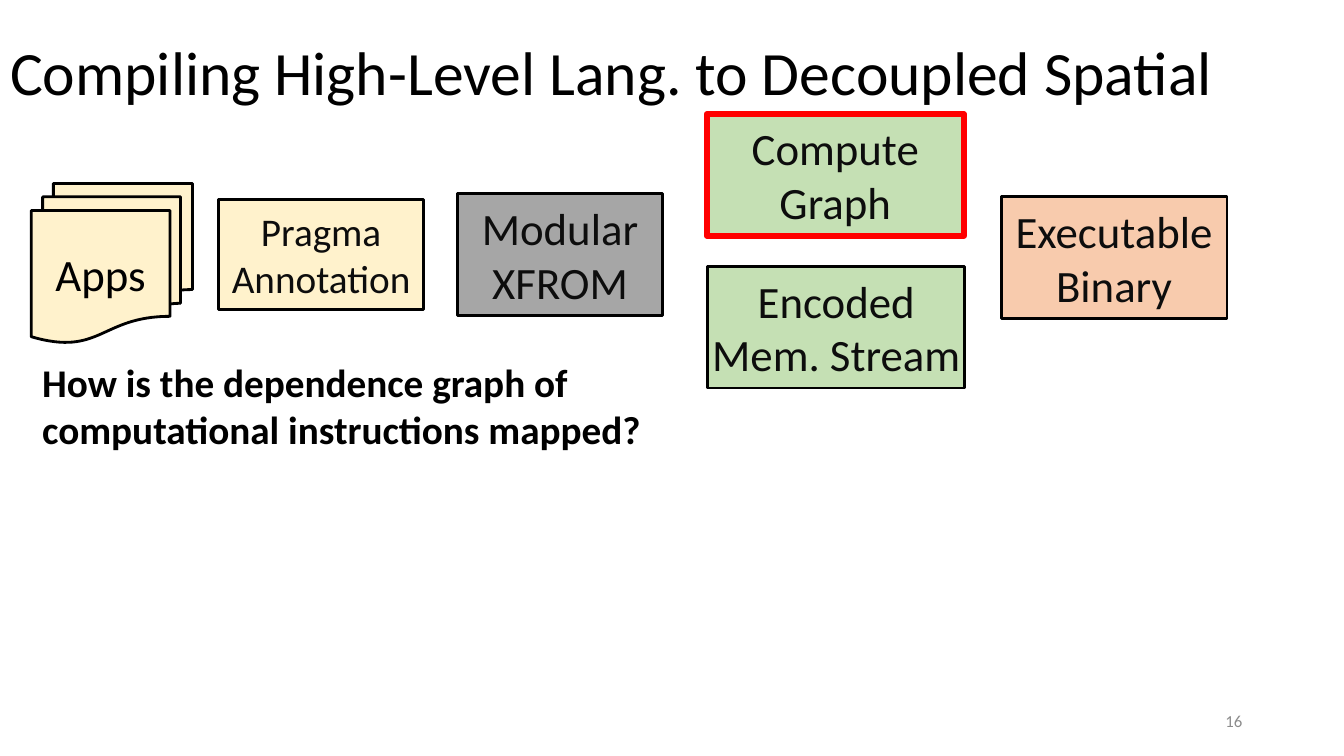
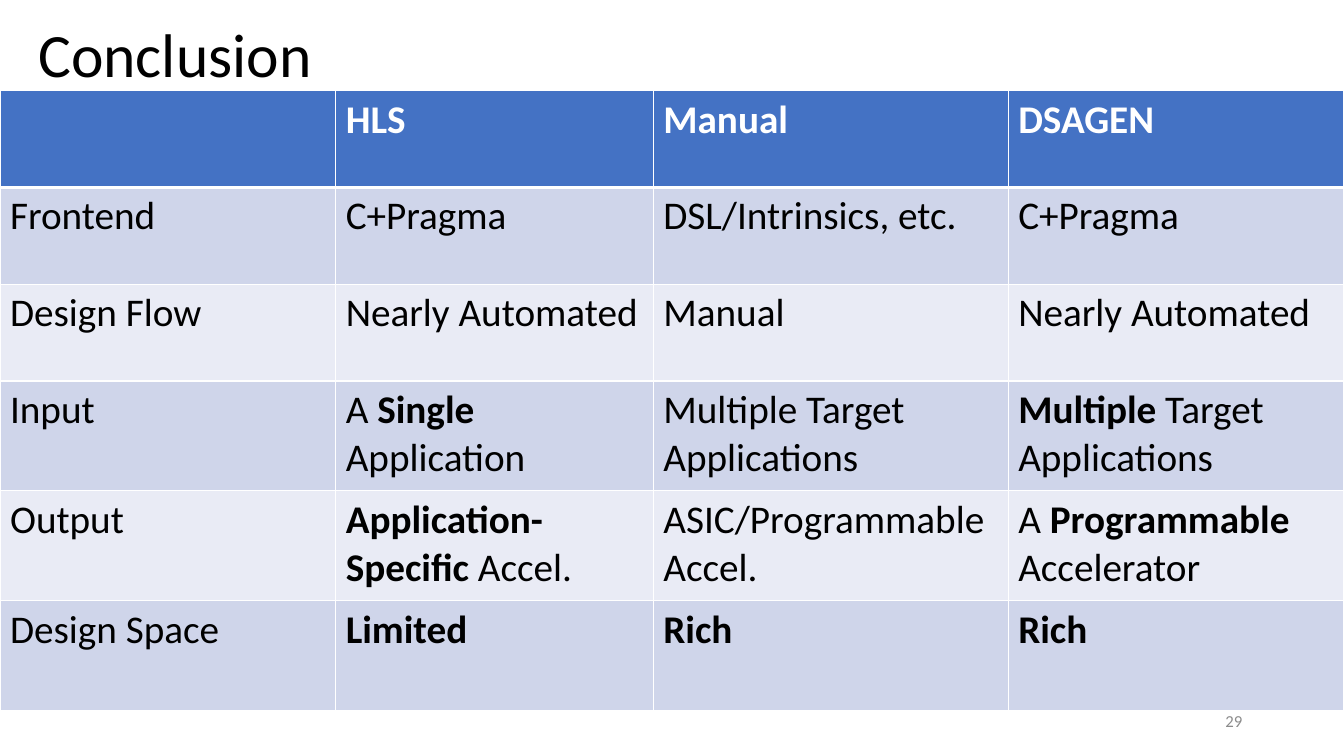
from dataclasses import dataclass

from lxml.etree import SubElement
from pptx import Presentation
from pptx.dml.color import RGBColor
from pptx.enum.shapes import MSO_SHAPE
from pptx.enum.text import MSO_ANCHOR, MSO_AUTO_SIZE, PP_ALIGN
from pptx.oxml.ns import qn
from pptx.presentation import Presentation as Deck
from pptx.slide import Slide
from pptx.table import _Cell as Cell
from pptx.text.text import TextFrame
from pptx.util import Inches, Pt

FONT = "Calibri"
BLACK, WHITE, RED = "000000", "FFFFFF", "FF0000"
INK, PAGE_GREY = "0D0D0D", "8C8C8C"
CREAM, GREY, GREEN, PEACH = "FFF2CC", "A6A6A6", "C5E0B4", "F8CBAD"
HEADER_BLUE, BANDS = "4472C4", ("CFD5EA", "E9EBF5")


@dataclass(frozen=True)
class Area:
    left: float
    top: float
    width: float
    height: float

    def lengths(self) -> tuple[Inches, ...]:
        return tuple(Inches(n) for n in (self.left, self.top, self.width, self.height))


@dataclass(frozen=True)
class Stage:
    text: str
    area: Area
    fill: str
    outline: str = BLACK
    outline_width: float = 2
    size: float = 32
    ink: str = INK
    shape: MSO_SHAPE = MSO_SHAPE.RECTANGLE
    wrap: bool = True


STAGES = (
    Stage("Executable Binary", Area(9.93, 1.95, 2.24, 1.21), PEACH),
    Stage("Apps", Area(0.31, 1.82, 1.6, 1.58), CREAM, ink=BLACK,
          shape=MSO_SHAPE.FLOWCHART_MULTIDOCUMENT),
    Stage("Compute Graph", Area(7.01, 1.13, 2.55, 1.21), GREEN,
          outline=RED, outline_width=4),
    Stage("Encoded\nMem. Stream", Area(7.02, 2.64, 2.55, 1.21), GREEN, wrap=False),
    Stage("Pragma Annotation", Area(2.17, 1.98, 2.03, 1.09), CREAM, size=28),
    Stage("Modular XFROM", Area(4.54, 1.92, 2.03, 1.21), GREY),
)

COMPARISON = (
    ("", "**HLS**", "**Manual**", "**DSAGEN**"),
    ("Frontend", "C+Pragma", "DSL/Intrinsics, etc.", "C+Pragma"),
    ("Design Flow", "Nearly Automated", "Manual", "Nearly Automated"),
    ("Input", "A **Single** Application", "Multiple Target Applications",
     "**Multiple** Target Applications"),
    ("Output", "**Application-Specific** Accel.", "ASIC/Programmable Accel.",
     "A **Programmable** Accelerator"),
    ("Design Space", "**Limited**", "**Rich**", "**Rich**"),
)
COLUMN_WIDTHS = (3.33, 3.15, 3.52, 3.33)
ROW_HEIGHTS = (0.96,) * 3 + (1.09,) * 3


def rgb(color: str) -> RGBColor:
    return RGBColor.from_string(color)


def write(frame: TextFrame, text: str, *, size: float, color: str = BLACK,
          align: PP_ALIGN = PP_ALIGN.LEFT, anchor: MSO_ANCHOR = MSO_ANCHOR.TOP,
          wrap: bool = True, line_spacing: float | None = None) -> None:
    """Fill a frame; newlines part paragraphs and ** marks bold spans."""
    frame.word_wrap = wrap
    frame.vertical_anchor = anchor
    for index, line in enumerate(text.split("\n")):
        para = frame.add_paragraph() if index else frame.paragraphs[0]
        para.alignment = align
        para.line_spacing = line_spacing
        for part, words in enumerate(line.split("**")):
            if words:
                span = para.add_run()
                span.text = words
                span.font.name = FONT
                span.font.size = Pt(size)
                span.font.bold = part % 2 == 1
                span.font.color.rgb = rgb(color)


def add_text(page: Slide, area: Area, text: str, **text_format) -> None:
    write(page.shapes.add_textbox(*area.lengths()).text_frame, text, **text_format)


def add_page(deck: Deck, title: str, area: Area, number: int) -> Slide:
    page = deck.slides.add_slide(deck.slide_layouts[5])
    heading = page.shapes.title
    heading.left, heading.top, heading.width, heading.height = area.lengths()
    heading.text_frame.auto_size = MSO_AUTO_SIZE.NONE
    write(heading.text_frame, title, size=44, anchor=MSO_ANCHOR.MIDDLE, line_spacing=0.9)
    add_text(page, Area(9.42, 6.95, 3, 0.4), str(number), size=12, color=PAGE_GREY,
             align=PP_ALIGN.RIGHT, anchor=MSO_ANCHOR.MIDDLE)
    return page


def add_stage(page: Slide, stage: Stage) -> None:
    box = page.shapes.add_shape(stage.shape, *stage.area.lengths())
    box.shadow.inherit = False
    box.fill.solid()
    box.fill.fore_color.rgb = rgb(stage.fill)
    box.line.color.rgb = rgb(stage.outline)
    box.line.width = Pt(stage.outline_width)
    write(box.text_frame, stage.text, size=stage.size, color=stage.ink,
          align=PP_ALIGN.CENTER, anchor=MSO_ANCHOR.MIDDLE, wrap=stage.wrap)


def set_borders(cell: Cell, *, top: float = 1, bottom: float = 1) -> None:
    """Draw white borders; call before filling, as the schema orders lines first."""
    properties = cell._tc.get_or_add_tcPr()
    for side, width in (("L", 1), ("R", 1), ("T", top), ("B", bottom)):
        line = SubElement(properties, qn(f"a:ln{side}"), w=str(Pt(width)))
        SubElement(SubElement(line, qn("a:solidFill")), qn("a:srgbClr"), val=WHITE)


def add_comparison(page: Slide) -> None:
    area = Area(0, 0.9, sum(COLUMN_WIDTHS), sum(ROW_HEIGHTS))
    table = page.shapes.add_table(
        len(COMPARISON), len(COLUMN_WIDTHS), *area.lengths()).table
    table.first_row = table.horz_banding = False
    for column, width in zip(table.columns, COLUMN_WIDTHS):
        column.width = Inches(width)
    for index, (row, height, texts) in enumerate(zip(table.rows, ROW_HEIGHTS, COMPARISON)):
        row.height = Inches(height)
        is_header = index == 0
        for cell, text in zip(row.cells, texts):
            set_borders(cell, top=3 if index == 1 else 1, bottom=3 if is_header else 1)
            cell.fill.solid()
            cell.fill.fore_color.rgb = rgb(HEADER_BLUE if is_header else BANDS[(index - 1) % 2])
            write(cell.text_frame, text, size=28, color=WHITE if is_header else BLACK)


def build_compiling(deck: Deck) -> None:
    page = add_page(deck, "Compiling High-Level Lang. to Decoupled Spatial",
                    Area(0, 0.02, 12.19, 1.45), 16)
    for stage in STAGES:
        add_stage(page, stage)
    add_text(page, Area(0.32, 3.51, 6.7, 1.04),
             "**How is the dependence graph of computational instructions mapped?**", size=28)


def build_conclusion(deck: Deck) -> None:
    page = add_page(deck, "Conclusion", Area(0.28, -0.15, 11.5, 1.45), 29)
    add_comparison(page)


def main() -> None:
    deck = Presentation()
    deck.slide_width, deck.slide_height = Inches(13.33), Inches(7.5)
    build_compiling(deck)
    build_conclusion(deck)
    deck.save("out.pptx")


if __name__ == "__main__":
    main()
